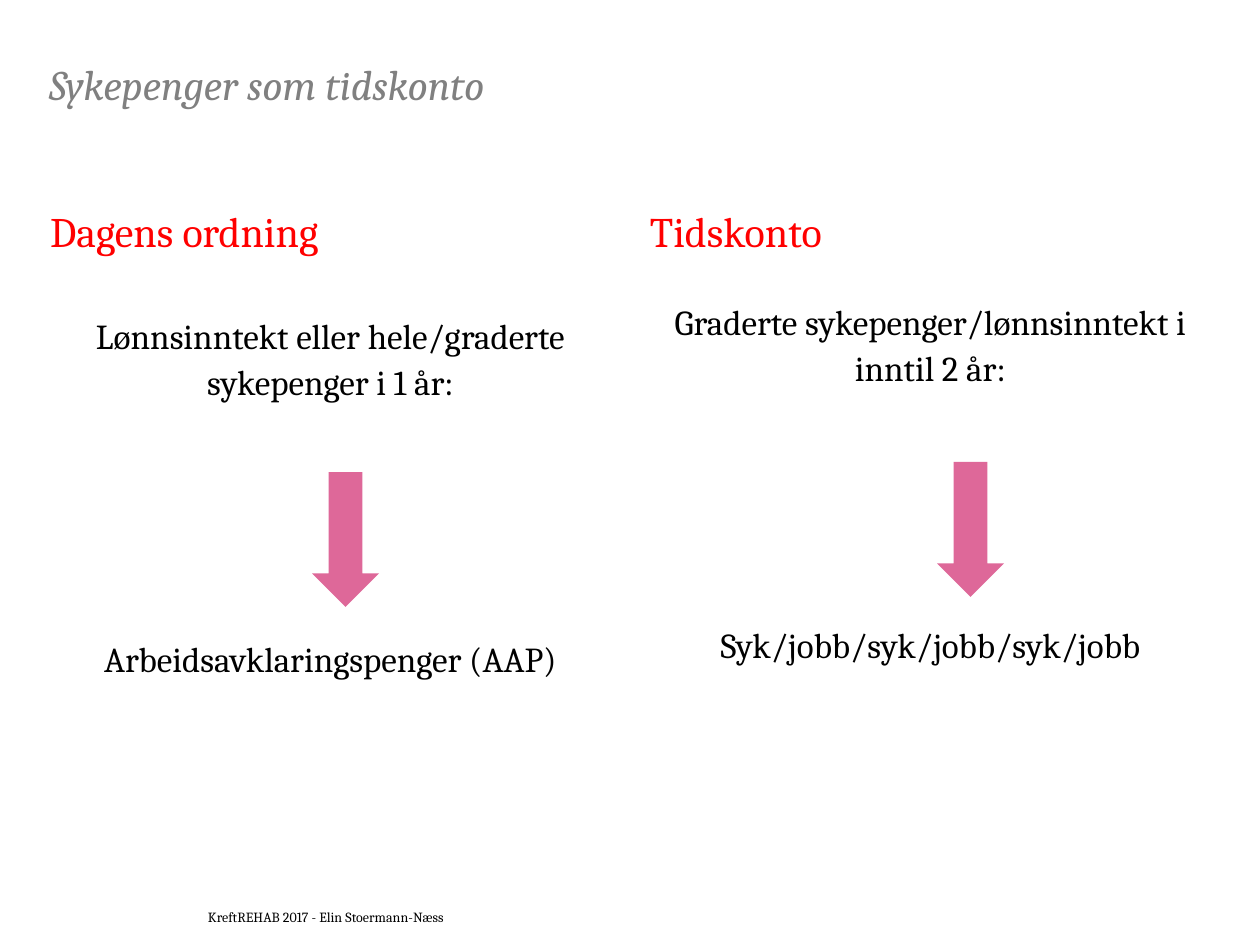
import pptx
import pptx.dml.color
import pptx.enum.shapes
import pptx.enum.text
import pptx.oxml.ns
import pptx.util
import lxml.etree

COLORS = {"title": "808080", "heading": "FF0000", "text": "000000", "arrow": "DE6899"}
ALIGN = pptx.enum.text.PP_ALIGN
ANCHOR = pptx.enum.text.MSO_ANCHOR
FRAME = {"margin_left": 0, "margin_top": 0, "margin_right": 0, "margin_bottom": 0,
         "word_wrap": True, "auto_size": pptx.enum.text.MSO_AUTO_SIZE.NONE}


def px(n):
    """Turn slide pixels into EMU."""
    return pptx.util.Emu(round(n * 914400 / 126))


def rgb(name):
    """Look up a named colour."""
    return pptx.dml.color.RGBColor.from_string(COLORS[name])


def set_all(obj, values):
    """Set each attribute of an object from a dict."""
    for key, value in values.items():
        setattr(obj, key, value)


def place(sp, box):
    """Move and size a shape to a pixel box."""
    set_all(sp, dict(zip(("left", "top", "width", "height"), map(px, box))))


def write(p, text, size, color, align=ALIGN.LEFT, before=0, spacing=1.0, italic=False):
    """Fill one paragraph without a bullet."""
    set_all(p, {"alignment": align, "line_spacing": spacing,
                "space_before": px(before), "space_after": 0})
    pPr = p._p.get_or_add_pPr()
    pPr.set("marL", "0")
    pPr.set("indent", "0")
    lxml.etree.SubElement(pPr, pptx.oxml.ns.qn("a:buNone"))
    r = p.add_run()
    r.text = text
    set_all(r.font, {"name": "Cambria", "size": pptx.util.Pt(size),
                     "bold": False, "italic": italic})
    r.font.color.rgb = rgb(color)


def add_line(sp, box, anchor, *args, **fmt):
    """Put a single line of text in a shape."""
    place(sp, box)
    set_all(sp.text_frame, FRAME | {"vertical_anchor": anchor})
    write(sp.text_frame.paragraphs[0], *args, **fmt)


def add_column(s, sp, box, heading, start, result, gap, arrow):
    """Build a heading, a starting point, an arrow and a result."""
    place(sp, box)
    tf = sp.text_frame
    set_all(tf, FRAME | {"vertical_anchor": ANCHOR.TOP})
    rows = [(heading, 24, "heading", ALIGN.LEFT, 0),
            (start, 20, "text", ALIGN.CENTER, gap),
            (result, 20, "text", ALIGN.CENTER, 231)]
    for i, row in enumerate(rows):
        p = tf.add_paragraph() if i else tf.paragraphs[0]
        write(p, *row, spacing=1.1)
    x, y = box[0] + arrow[0], box[1] + arrow[1]
    down = s.shapes.add_shape(pptx.enum.shapes.MSO_SHAPE.DOWN_ARROW,
                              px(x), px(y), px(67), px(135))
    down.shadow.inherit = False
    down.fill.solid()
    down.fill.fore_color.rgb = rgb("arrow")
    down.line.fill.background()


def main():
    """Build the slide and save it."""
    prs = pptx.Presentation()
    set_all(prs, {"slide_width": px(1260), "slide_height": px(945)})
    s = prs.slides.add_slide(prs.slide_layouts[3])
    title, left, right = s.placeholders
    add_line(title, (49, 59, 1160, 62), ANCHOR.TOP,
             "Sykepenger som tidskonto", 24, "title", italic=True)
    add_column(s, left, (50, 200, 561, 605), "Dagens ordning",
               "Lønnsinntekt eller hele/graderte sykepenger i 1 år:",
               "Arbeidsavklaringspenger (AAP)", 55, (262, 272))
    add_column(s, right, (650, 200, 561, 605), "Tidskonto",
               "Graderte sykepenger/lønnsinntekt i inntil 2 år:",
               "Syk/jobb/syk/jobb/syk/jobb", 41, (287, 262))
    add_line(s.shapes.add_textbox(0, 0, 0, 0), (208, 887, 950, 59), ANCHOR.MIDDLE,
             "KreftREHAB 2017 - Elin Stoermann-Næss", 8, "text")
    prs.save("out.pptx")


if __name__ == "__main__":
    main()
